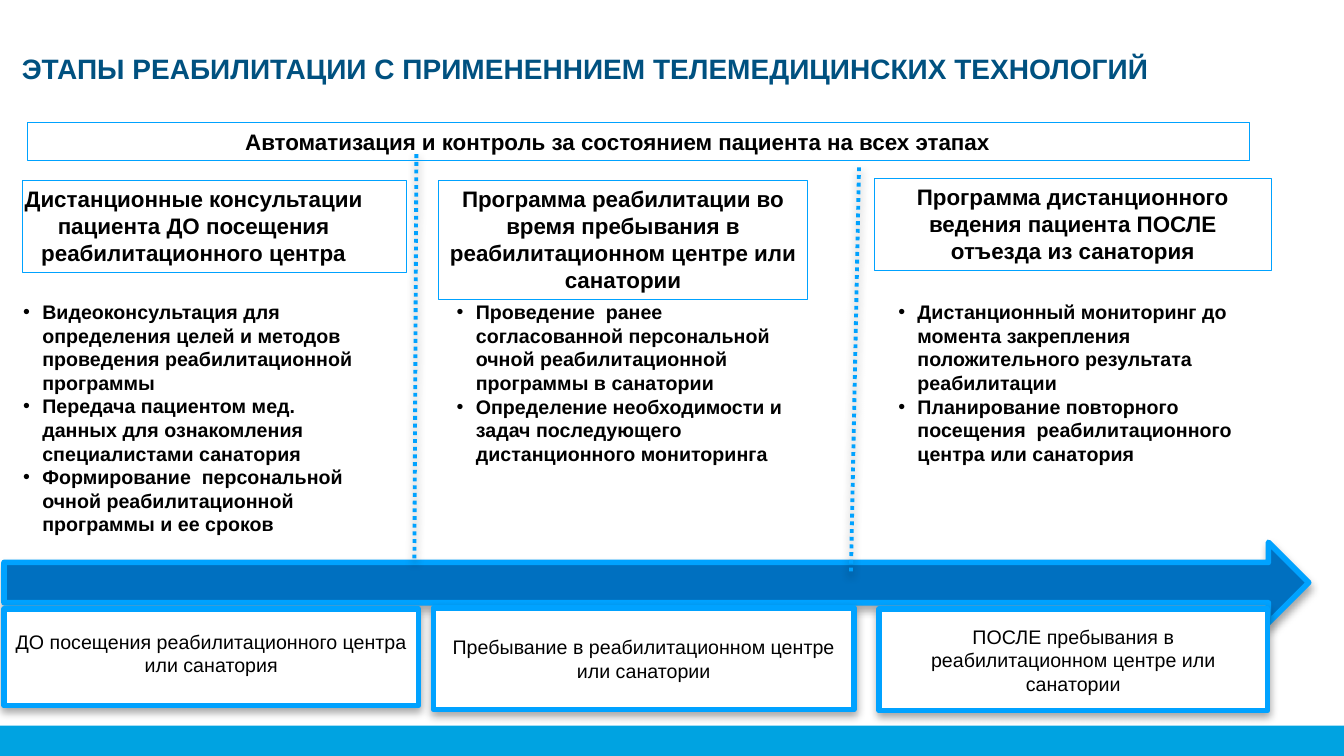
"""Build the slide on rehabilitation stages with telemedicine."""
from lxml import etree
from pptx import Presentation
from pptx.dml.color import RGBColor
from pptx.enum.dml import MSO_LINE
from pptx.enum.shapes import MSO_CONNECTOR, MSO_SHAPE
from pptx.enum.text import MSO_ANCHOR, PP_ALIGN
from pptx.oxml.ns import qn
from pptx.util import Inches, Pt

BLACK = RGBColor(0x00, 0x00, 0x00)
WHITE = RGBColor(0xFF, 0xFF, 0xFF)
TITLE_BLUE = RGBColor(0x00, 0x51, 0x80)
BAR_BLUE = RGBColor(0x00, 0xA3, 0xE1)
ARROW_BLUE = RGBColor(0x00, 0x70, 0xC0)
LINE_BLUE = RGBColor(0x00, 0xA2, 0xFF)
RECTANGLE, RIGHT_ARROW = MSO_SHAPE.RECTANGLE, MSO_SHAPE.RIGHT_ARROW
TOP, MIDDLE = MSO_ANCHOR.TOP, MSO_ANCHOR.MIDDLE
LEFT, CENTER = PP_ALIGN.LEFT, PP_ALIGN.CENTER
EVEN_INSETS = (0.05, 0.05, 0.05, 0.05)
WIDE_RIGHT_INSETS = (0, 0.05, 0.41, 0.05)
DEFAULT_INSETS = (0.1, 0.05, 0.1, 0.05)


def write_text(shape, texts, size, bold=True, color=BLACK, insets=EVEN_INSETS,
               anchor=MIDDLE, alignment=CENTER, bullets=False):
    frame = shape.text_frame
    frame.word_wrap = True
    frame.vertical_anchor = anchor
    for side, inset in zip(("left", "top", "right", "bottom"), insets):
        setattr(frame, f"margin_{side}", Inches(inset))
    for index, text in enumerate(texts):
        paragraph = frame.add_paragraph() if index else frame.paragraphs[0]
        paragraph.alignment = alignment
        if bullets:
            properties = paragraph._p.get_or_add_pPr()
            properties.set("marL", str(Inches(0.34)))
            properties.set("indent", str(Inches(-0.19)))
            etree.SubElement(properties, qn("a:buFont"), typeface="Arial")
            etree.SubElement(properties, qn("a:buChar"), char="•")
        run = paragraph.add_run()
        run.text = text
        formats = {"name": "Arial", "size": Pt(size), "bold": bold}
        for name, value in formats.items():
            setattr(run.font, name, value)
        run.font.color.rgb = color


def add_shadow(shape, opacity):
    effects = etree.SubElement(shape._element.spPr, qn("a:effectLst"))
    shadow = etree.SubElement(effects, qn("a:outerShdw"), blurRad=str(Pt(6)),
                              dist=str(Pt(3)), dir="5400000", rotWithShape="0")
    color = etree.SubElement(shadow, qn("a:srgbClr"), val=str(BLACK))
    etree.SubElement(color, qn("a:alpha"), val=str(opacity * 1000))


presentation = Presentation()
presentation.slide_width = Inches(13.33)
presentation.slide_height = Inches(7.5)
slide = presentation.slides.add_slide(presentation.slide_layouts[5])
shapes = slide.shapes

title = shapes.title
title.left, title.top, title.width, title.height = map(Inches, (0, 0.07, 11.61, 0.81))
write_text(title, ["ЭТАПЫ РЕАБИЛИТАЦИИ С ПРИМЕНЕННИЕМ ТЕЛЕМЕДИЦИНСКИХ ТЕХНОЛОГИЙ"],
           20, color=TITLE_BLUE)
title.text_frame.paragraphs[0].line_spacing = 2.22

footer_bar = shapes.add_shape(RECTANGLE, 0, Inches(7.2), Inches(13.33), Inches(0.3))
footer_bar.shadow.inherit = False
footer_bar.fill.solid()
footer_bar.fill.fore_color.rgb = BAR_BLUE
footer_bar.line.fill.background()

LOW_INSETS = (0.05, 0.05, 0.05, 0.13)
timeline = [
    (RIGHT_ARROW, (0.04, 5.38, 12.94, 0.8), ARROW_BLUE, EVEN_INSETS, ""),
    (RECTANGLE, (0.04, 6.04, 4.11, 0.96), WHITE, LOW_INSETS,
     "ДО посещения реабилитационного центра или санатория"),
    (RECTANGLE, (4.3, 6.03, 4.17, 1.01), WHITE, EVEN_INSETS,
     "Пребывание в реабилитационном центре или санатории"),
    (RECTANGLE, (8.72, 6.04, 3.85, 1.01), WHITE, EVEN_INSETS,
     "ПОСЛЕ пребывания в реабилитационном центре или санатории"),
]
for kind, place, fill, insets, text in timeline:
    shape = shapes.add_shape(kind, *map(Inches, place))
    shape.fill.solid()
    shape.fill.fore_color.rgb = fill
    shape.line.color.rgb = LINE_BLUE
    shape.line.width = Pt(4)
    add_shadow(shape, 35)
    if text:
        write_text(shape, [text], 14, bold=False, insets=insets)

for ends in [(4.13, 1.53, 4.11, 5.57), (8.52, 1.66, 8.44, 5.68)]:
    divider = shapes.add_connector(MSO_CONNECTOR.STRAIGHT, *map(Inches, ends))
    divider.line.color.rgb = LINE_BLUE
    divider.line.width = Pt(2.75)
    divider.line.dash_style = MSO_LINE.ROUND_DOT
    add_shadow(divider, 38)

headings = [
    ((0.27, 1.22, 12.12, 0.37), WIDE_RIGHT_INSETS,
     "Автоматизация и контроль за состоянием пациента на всех этапах"),
    ((0.22, 1.79, 3.81, 0.91), WIDE_RIGHT_INSETS,
     "Дистанционные консультации пациента ДО посещения реабилитационного центра"),
    ((4.35, 1.79, 3.66, 1.18), DEFAULT_INSETS,
     "Программа реабилитации во время пребывания в реабилитационном центре или санатории"),
    ((8.67, 1.77, 3.94, 0.91), DEFAULT_INSETS,
     "Программа дистанционного ведения пациента ПОСЛЕ отъезда из санатория"),
]
for place, insets, text in headings:
    heading = shapes.add_shape(RECTANGLE, *map(Inches, place))
    heading.shadow.inherit = False
    heading.fill.background()
    heading.line.color.rgb = LINE_BLUE
    heading.line.width = Pt(0.75)
    write_text(heading, [text], 16, insets=insets, anchor=TOP)

stage_details = [
    ((0.08, 2.93, 4.03, 2.46), [
        "Видеоконсультация для определения целей и методов проведения "
        "реабилитационной программы",
        "Передача пациентом мед. данных для ознакомления специалистами санатория",
        "Формирование  персональной очной реабилитационной программы и ее сроков"]),
    ((4.38, 2.93, 3.9, 1.75), [
        "Проведение  ранее согласованной персональной очной реабилитационной "
        "программы в санатории",
        "Определение необходимости и задач последующего дистанционного мониторинга"]),
    ((8.76, 2.93, 3.9, 1.99), [
        "Дистанционный мониторинг до момента закрепления положительного "
        "результата реабилитации",
        "Планирование повторного посещения  реабилитационного центра или санатория"]),
]
for place, texts in stage_details:
    details = shapes.add_textbox(*map(Inches, place))
    write_text(details, texts, 14, insets=WIDE_RIGHT_INSETS, anchor=TOP,
               alignment=LEFT, bullets=True)

presentation.save("out.pptx")
